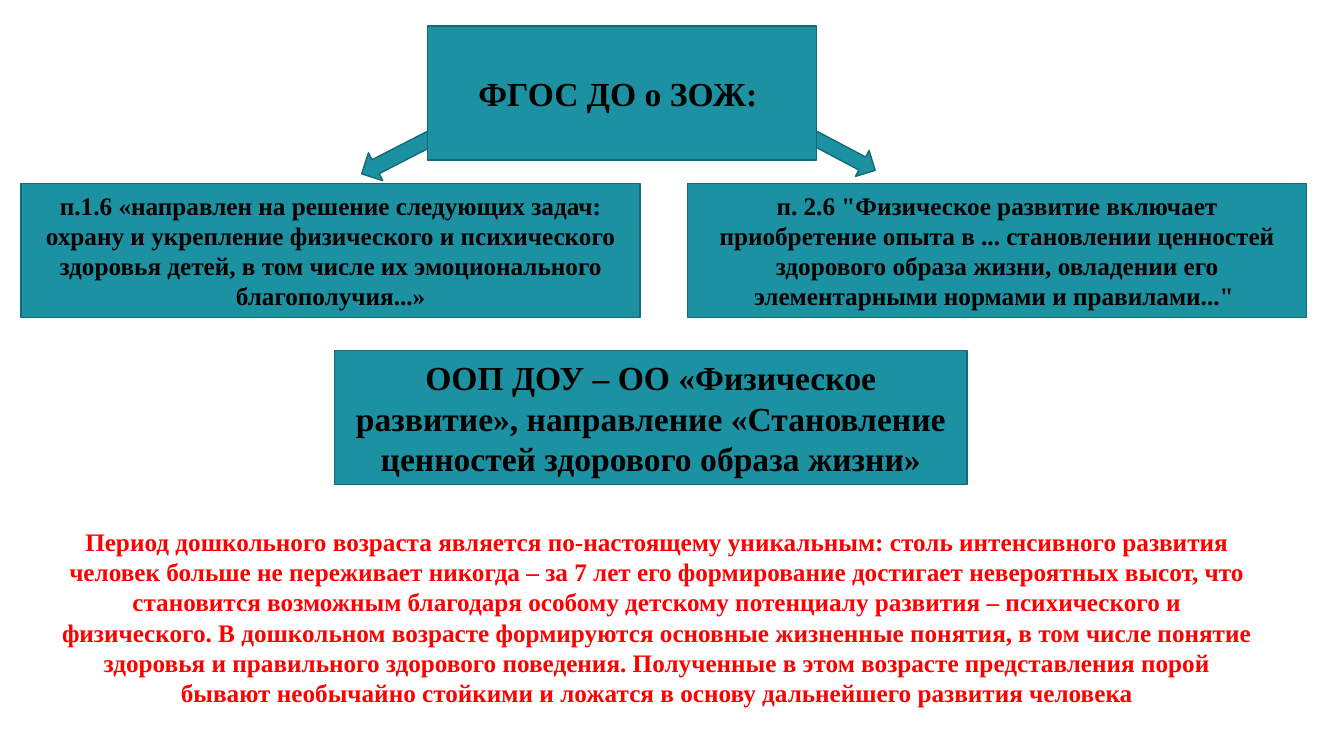
"""Build the slide on healthy lifestyle in the preschool education standard."""
from dataclasses import dataclass

from pptx import Presentation
from pptx.dml.color import RGBColor
from pptx.enum.shapes import MSO_SHAPE as Shape
from pptx.enum.text import MSO_ANCHOR as Anchor, MSO_AUTO_SIZE as AutoSize, PP_ALIGN as Align
from pptx.util import Inches, Pt


@dataclass(frozen=True)
class Theme:
    font: str = "Times New Roman"
    fill: RGBColor = RGBColor(0x1B, 0x91, 0xA1)
    line: RGBColor = RGBColor(0x14, 0x6B, 0x77)
    text: RGBColor = RGBColor(0, 0, 0)
    accent: RGBColor = RGBColor(0xFF, 0, 0)
    large: Pt = Pt(24)
    body: Pt = Pt(18)


theme = Theme()


def add_block(s, kind, x, y, w, h):
    sp = s.shapes.add_shape(kind, Inches(x), Inches(y), Inches(w), Inches(h))
    sp.shadow.inherit = False
    sp.fill.solid()
    sp.fill.fore_color.rgb = theme.fill
    sp.line.color.rgb = theme.line
    sp.line.width = Pt(1)
    return sp


def write(sp, text, size, color):
    tf = sp.text_frame
    tf.word_wrap = True
    p = tf.paragraphs[0]
    p.text = text
    p.alignment = Align.CENTER
    p.font.name = theme.font
    p.font.size = size
    p.font.bold = True
    p.font.color.rgb = color
    return tf


prs = Presentation()
prs.slide_width, prs.slide_height = Inches(13.33), Inches(7.5)
s = prs.slides.add_slide(prs.slide_layouts[6])

for x, y, w, angle in ((8.12, 1, 0.29, 297.9), (3.85, 1.04, 0.31, 62.8)):
    add_block(s, Shape.DOWN_ARROW, x, y, w, 0.94).rotation = angle

boxes = (
    (4.24, 0.26, 3.86, theme.large, "ФГОС ДО о ЗОЖ: "),
    (0.21, 1.82, 6.14, theme.body,
     "п.1.6 «направлен на решение следующих задач: охрану и укрепление "
     "физического и психического здоровья детей, в том числе их "
     "эмоционального благополучия...»"),
    (6.82, 1.82, 6.14, theme.body,
     'п. 2.6 "Физическое развитие включает приобретение опыта в ... '
     "становлении ценностей здорового образа жизни, овладении его "
     'элементарными нормами и правилами..." '),
    (3.32, 3.48, 6.27, theme.large,
     "ООП ДОУ – ОО «Физическое развитие», направление «Становление "
     "ценностей здорового образа жизни»"),
)
for x, y, w, size, text in boxes:
    box = add_block(s, Shape.RECTANGLE, x, y, w, 1.33)
    write(box, text, size, theme.text).vertical_anchor = Anchor.MIDDLE

summary = s.shapes.add_textbox(Inches(0.49), Inches(5.17), Inches(12.05), Inches(1.92))
tf = write(
    summary,
    "Период дошкольного возраста является по-настоящему уникальным: столь "
    "интенсивного развития человек больше не переживает никогда – за 7 лет его "
    "формирование достигает невероятных высот, что становится возможным "
    "благодаря особому детскому потенциалу развития – психического и "
    "физического. В дошкольном возрасте формируются основные жизненные понятия, "
    "в том числе понятие здоровья и правильного здорового поведения. Полученные "
    "в этом возрасте представления порой бывают необычайно стойкими и ложатся "
    "в основу дальнейшего развития человека",
    theme.body,
    theme.accent,
)
tf.auto_size = AutoSize.SHAPE_TO_FIT_TEXT

prs.save("out.pptx")
